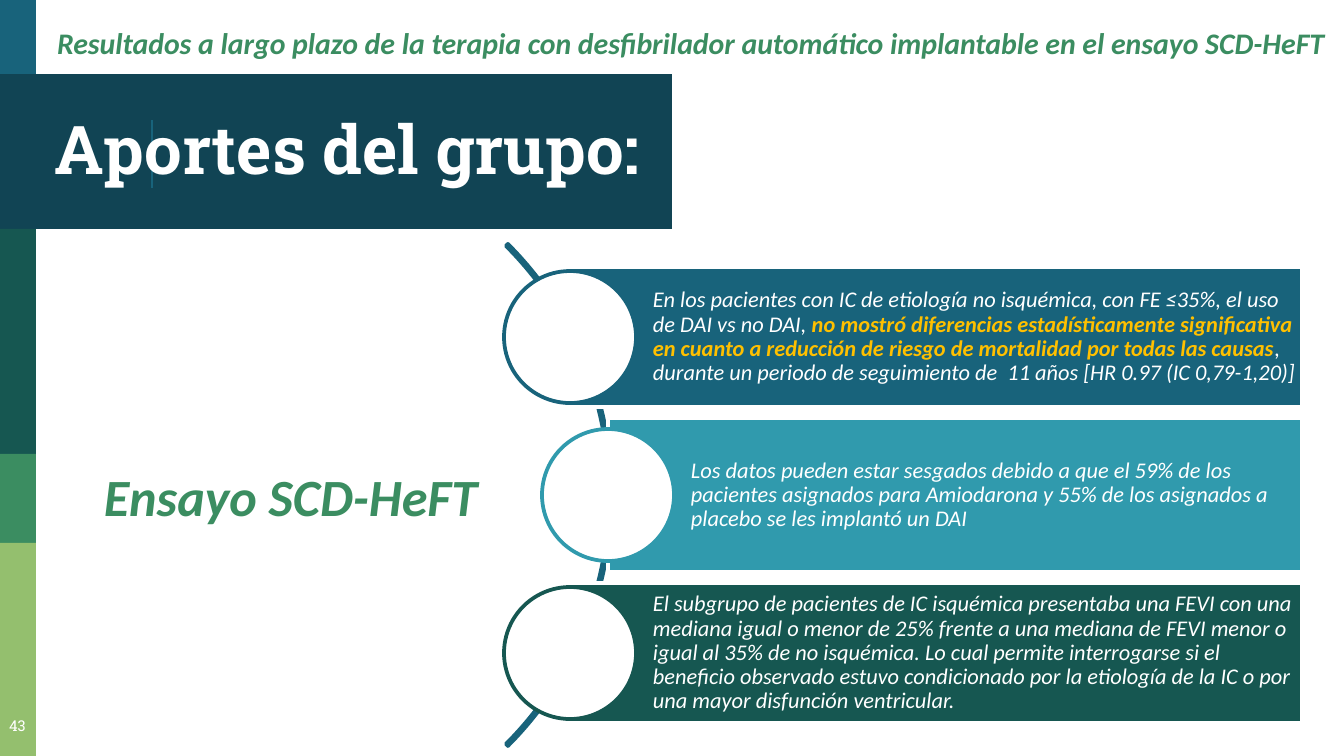
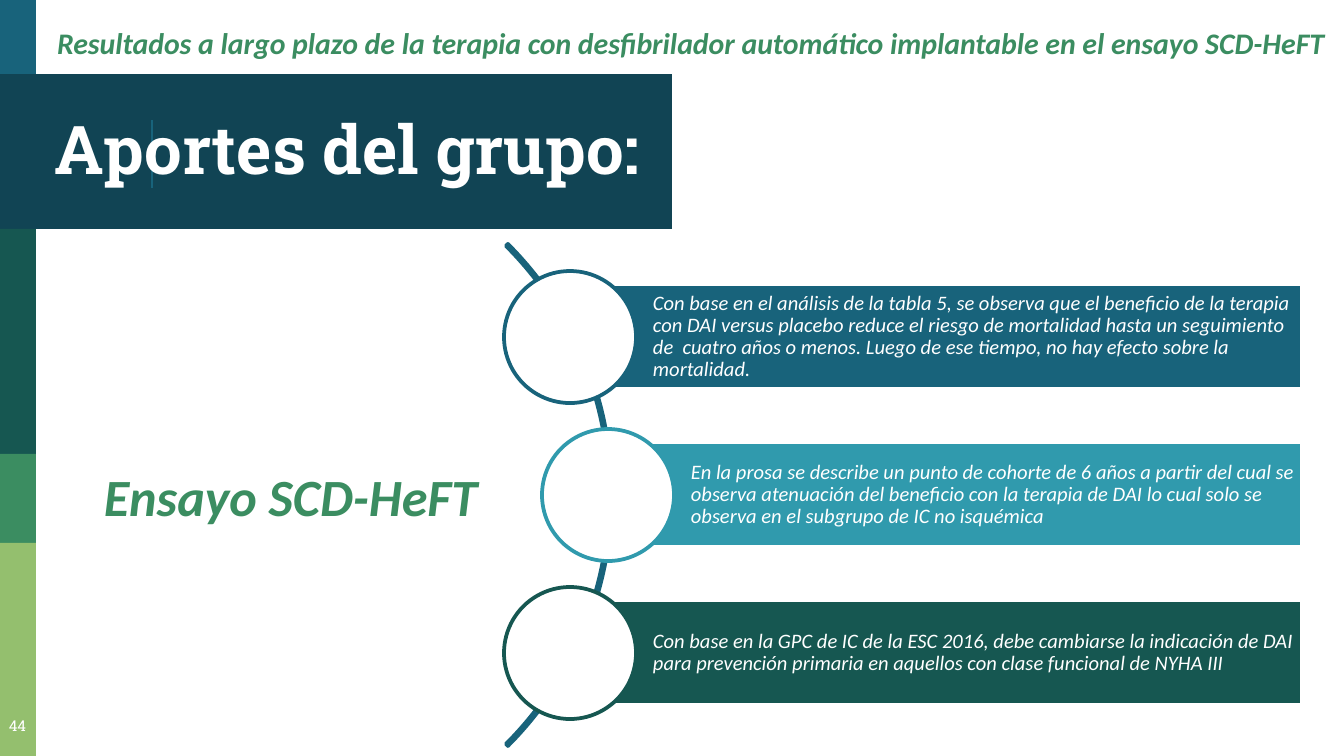
from dataclasses import dataclass

from lxml.etree import SubElement
from pptx import Presentation
from pptx.dml.color import RGBColor
from pptx.enum.shapes import MSO_CONNECTOR as Line, MSO_SHAPE as Shape
from pptx.enum.text import MSO_ANCHOR as Anchor, PP_ALIGN as Align
from pptx.oxml.ns import qn
from pptx.util import Emu, Pt


@dataclass(frozen=True)
class Theme:
    """Colours, fonts and type sizes shared by the slides."""
    blue: str = "18637B"
    navy: str = "114454"
    teal: str = "309AAD"
    forest: str = "165751"
    green: str = "3B8D61"
    lime: str = "94BF6E"
    gold: str = "FFC000"
    white: str = "FFFFFF"
    body_font: str = "Calibri"
    heading_font: str = "Roboto Slab"
    number_size: int = 8
    title_size: int = 16
    study_size: int = 28
    heading_size: int = 36
    outline: float = 2
    hairline: float = 0.75


THEME = Theme()
EMU_PER_PX = 914400 / 134.4
PAGE_WIDTH, PAGE_HEIGHT = 1344, 756
FIRST_NUMBER = 43
TITLE = ("Resultados a largo plazo de la terapia con desfibrilador automático "
         "implantable en el ensayo SCD-HeFT")
HEADING = "Aportes del grupo:"
STUDY = "Ensayo SCD-HeFT"

STRIP_WIDTH = 36
BANDS = (
    (0, STRIP_WIDTH, 78, THEME.blue),
    (74, 672, 155, THEME.navy),
    (229, STRIP_WIDTH, 225, THEME.forest),
    (454, STRIP_WIDTH, 89, THEME.green),
    (543, STRIP_WIDTH, 213, THEME.lime),
)

ARC_BOX = (-98, 140, 710, 710)
CIRCLE = 132
BAR_RIGHT = 1302
MIDDLE_Y, ROW_STEP = 495, 158
ROWS = ((570, THEME.blue), (608, THEME.teal), (570, THEME.forest))

SLIDES = (
    (12, (140, 153, 140), (
        ("En los pacientes con IC de etiología no isquémica, con FE ≤35%, el uso "
         "de DAI vs no DAI, ",
         "no mostró diferencias estadísticamente significativa en cuanto a "
         "reducción de riesgo de mortalidad por todas las causas",
         ", durante un periodo de seguimiento de  11 años [HR 0.97 (IC 0,79-1,20)]"),
        ("Los datos pueden estar sesgados debido a que el 59% de los pacientes "
         "asignados para Amiodarona y 55% de los asignados a placebo se les "
         "implantó un DAI",),
        ("El subgrupo de pacientes de IC isquémica presentaba una FEVI con una "
         "mediana igual o menor de 25% frente a una mediana de FEVI menor o igual "
         "al 35% de no isquémica. Lo cual permite interrogarse si el beneficio "
         "observado estuvo condicionado por la etiología de la IC o por una mayor "
         "disfunción ventricular.",),
    )),
    (11, (105, 105, 105), (
        ("Con base en el análisis de la tabla 5, se observa que el beneficio de la "
         "terapia con DAI versus placebo reduce el riesgo de mortalidad hasta un "
         "seguimiento de  cuatro años o menos. Luego de ese tiempo, no hay efecto "
         "sobre la mortalidad.",),
        ("En la prosa se describe un punto de cohorte de 6 años a partir del cual "
         "se observa atenuación del beneficio con la terapia de DAI lo cual solo "
         "se observa en el subgrupo de IC no isquémica",),
        ("Con base en la GPC de IC de la ESC 2016, debe cambiarse la indicación de "
         "DAI para prevención primaria en aquellos con clase funcional de NYHA III",),
    )),
)


def px(length):
    """Turn pixels into EMU."""
    return Emu(round(length * EMU_PER_PX))


def rgb(colour):
    """Read a hex colour."""
    return RGBColor.from_string(colour)


def add_block(shapes, kind, box, fill=None, line=None):
    """Add a preset shape with an optional fill and outline."""
    block = shapes.add_shape(kind, *map(px, box))
    block.shadow.inherit = False
    if fill:
        block.fill.solid()
        block.fill.fore_color.rgb = rgb(fill)
    else:
        block.fill.background()
    if line:
        block.line.color.rgb = rgb(line)
        block.line.width = Pt(THEME.outline)
    else:
        block.line.fill.background()
    return block


def set_frame(frame, anchor, insets, wrap=True):
    """Set the anchor, wrapping and left, top, right, bottom insets."""
    frame.word_wrap = wrap
    frame.vertical_anchor = anchor
    (frame.margin_left, frame.margin_top,
     frame.margin_right, frame.margin_bottom) = map(px, insets)


def format_span(span, size, colour, font=THEME.body_font, bold=False, italic=False):
    """Format one run."""
    span.font.name = font
    span.font.size = Pt(size)
    span.font.bold = bold
    span.font.italic = italic
    span.font.color.rgb = rgb(colour)


def write_line(frame, text, align, *style, **emphasis):
    """Write one formatted paragraph."""
    frame.text = text
    para = frame.paragraphs[0]
    para.alignment = align
    format_span(para.runs[0], *style, **emphasis)


def add_label(page, box, text, align, anchor, insets, *style, wrap=True, **emphasis):
    """Add a text box holding one line."""
    label = page.shapes.add_textbox(*map(px, box))
    set_frame(label.text_frame, anchor, insets, wrap)
    write_line(label.text_frame, text, align, *style, **emphasis)


def add_bands(page):
    """Draw the side strip and heading band, then move them to the layout."""
    parts = [add_block(page.shapes, Shape.RECTANGLE, (0, top, width, height), colour)
             for top, width, height, colour in BANDS]
    rule = page.shapes.add_connector(Line.STRAIGHT, *map(px, (152, 120, 152, 188)))
    rule.line.color.rgb = rgb(THEME.blue)
    rule.line.width = Pt(THEME.hairline)
    SubElement(rule.element.spPr, qn("a:effectLst"))
    tree = page.slide_layout.shapes.element
    for number, part in enumerate(parts + [rule], start=100):
        part.element.xpath("./*/p:cNvPr")[0].set("id", str(number))
        tree.append(part.element)


def add_title(page):
    """Place and format the title placeholder."""
    title = page.shapes.title
    title.left, title.top, title.width, title.height = map(px, (44, 12, 1300, 62))
    set_frame(title.text_frame, Anchor.MIDDLE, (13, 13, 13, 13))
    write_line(title.text_frame, TITLE, Align.LEFT, THEME.title_size, THEME.green,
               bold=True, italic=True)


def add_finding(shapes, left, middle, height, colour, spans, size):
    """Add a text bar with its circle; every second span is emphasised."""
    bar = add_block(shapes, Shape.RECTANGLE,
                    (left, middle - height / 2, BAR_RIGHT - left, height),
                    colour, THEME.white)
    set_frame(bar.text_frame, Anchor.MIDDLE, (83, 4, 4, 4))
    para = bar.text_frame.paragraphs[0]
    para.alignment = Align.LEFT
    para.line_spacing = 0.9
    for index, text in enumerate(spans):
        strong = index % 2 == 1
        span = para.add_run()
        span.text = text
        format_span(span, size, THEME.gold if strong else THEME.white,
                    bold=strong, italic=True)
    add_block(shapes, Shape.OVAL,
              (left - CIRCLE / 2, middle - CIRCLE / 2, CIRCLE, CIRCLE),
              THEME.white, colour)


def add_diagram(page, size, heights, findings):
    """Group the arc with its three findings."""
    shapes = page.shapes.add_group_shape().shapes
    arc = add_block(shapes, Shape.BLOCK_ARC, ARC_BOX, line=THEME.blue)
    for index, value in enumerate((189, 27, 0.004)):
        arc.adjustments[index] = value
    for index, ((left, colour), height, spans) in enumerate(zip(ROWS, heights, findings)):
        middle = MIDDLE_Y + (index - 1) * ROW_STEP
        add_finding(shapes, left, middle, height, colour, spans, size)


def add_labels(page, number):
    """Add the page number, the heading and the study name."""
    add_label(page, (-8, 708, 51, 47), str(number), Align.CENTER, Anchor.TOP,
              (13, 13, 13, 13), THEME.number_size, THEME.white, THEME.heading_font)
    add_label(page, (23, 87, 648, 114), HEADING, Align.CENTER, Anchor.BOTTOM,
              (13, 13, 13, 13), THEME.heading_size, THEME.white, THEME.heading_font,
              bold=True)
    add_label(page, (91, 457, 405, 77), STUDY, Align.LEFT, Anchor.TOP,
              (13, 7, 13, 7), THEME.study_size, THEME.green, wrap=False,
              bold=True, italic=True)


def main():
    """Build and save the deck."""
    deck = Presentation()
    deck.slide_width, deck.slide_height = px(PAGE_WIDTH), px(PAGE_HEIGHT)
    layout = deck.slide_layouts.get_by_name("Title Only")
    for number, (size, heights, findings) in enumerate(SLIDES, start=FIRST_NUMBER):
        page = deck.slides.add_slide(layout)
        if number == FIRST_NUMBER:
            add_bands(page)
        add_title(page)
        add_labels(page, number)
        add_diagram(page, size, heights, findings)
    deck.save("out.pptx")


if __name__ == "__main__":
    main()
